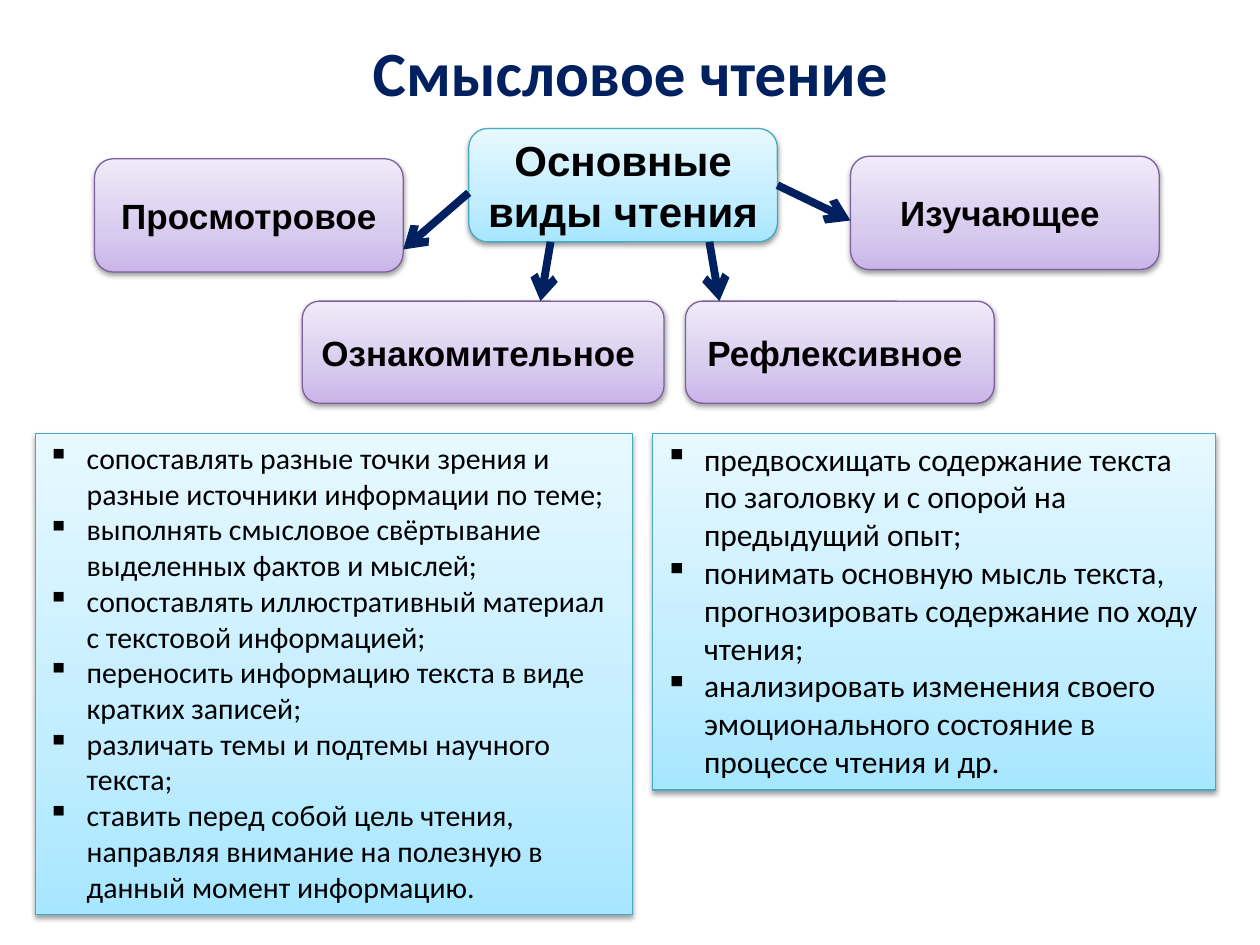
"""Build the slide on the main kinds of reading and the skills they develop."""
from copy import deepcopy

from lxml import etree
from pptx import Presentation
from pptx.dml.color import RGBColor
from pptx.enum import shapes, text
from pptx.oxml import ns, parse_xml
from pptx.util import Inches, Pt

BLACK = RGBColor(0x00, 0x00, 0x00)
NAVY = RGBColor(0x00, 0x20, 0x60)
TEAL = RGBColor(0x46, 0xAA, 0xC5)
PURPLE = RGBColor(0x7D, 0x60, 0xA0)
BLUES = [RGBColor(0xA7, 0xE6, 0xFF), RGBColor(0xC1, 0xED, 0xFF), RGBColor(0xE7, 0xF8, 0xFF)]
LILACS = [RGBColor(0xC9, 0xB5, 0xE8), RGBColor(0xD8, 0xCB, 0xEE), RGBColor(0xF0, 0xEA, 0xF9)]
SHADOW = (
    f'<a:outerShdw {ns.nsdecls("a")} blurRad="{Pt(3.1)}" dist="{Pt(1.6)}" dir="5400000" '
    'rotWithShape="0"><a:srgbClr val="000000"><a:alpha val="38000"/></a:srgbClr></a:outerShdw>'
)

presentation = Presentation()
presentation.slide_width = Inches(10)
presentation.slide_height = Inches(7.5)
slide = presentation.slides.add_slide(presentation.slide_layouts[6])


def write(shape, paragraphs, size, font="Calibri", color=BLACK, bold=False, bullet=None,
          align=text.PP_ALIGN.LEFT, anchor=text.MSO_ANCHOR.TOP, grow=False):
    frame = shape.text_frame
    frame.word_wrap = True
    frame.vertical_anchor = anchor
    if grow:
        frame.auto_size = text.MSO_AUTO_SIZE.SHAPE_TO_FIT_TEXT
    for index, line in enumerate(paragraphs):
        paragraph = frame.paragraphs[0] if index == 0 else frame.add_paragraph()
        paragraph.alignment = align
        if bullet:
            properties = paragraph._p.get_or_add_pPr()
            properties.set("marL", str(Inches(0.31)))
            properties.set("indent", str(-Inches(0.31)))
            etree.SubElement(properties, ns.qn("a:buChar")).set("char", bullet)
        run = paragraph.add_run()
        run.text = line
        run.font.name = font
        run.font.size = Pt(size)
        run.font.bold = bold
        run.font.color.rgb = color


def add_panel(kind, box, colors, outline):
    shape = slide.shapes.add_shape(kind, *map(Inches, box))
    shape.fill.gradient()
    shape.fill.gradient_angle = 90
    stop_list = shape._element.spPr.find(ns.qn("a:gradFill")).find(ns.qn("a:gsLst"))
    stop_list.insert(1, deepcopy(stop_list[0]))
    for stop, position, color in zip(shape.fill.gradient_stops, (0, 0.35, 1), colors):
        stop.position = position
        stop.color.rgb = color
    shape.line.color.rgb = outline
    shape.line.width = Pt(0.75)
    shape.shadow.inherit = False
    shape._element.spPr.find(ns.qn("a:effectLst")).append(parse_xml(SHADOW))
    return shape


kinds = [
    ("Основные виды чтения", (3.72, 1.02, 2.45, 0.9), 24, BLUES, TEAL),
    ("Просмотровое", (0.75, 1.26, 2.45, 0.9), 20, LILACS, PURPLE),
    ("Ознакомительное ", (2.4, 2.39, 2.87, 0.81), 20, LILACS, PURPLE),
    ("Изучающее ", (6.75, 1.24, 2.45, 0.9), 20, LILACS, PURPLE),
    ("Рефлексивное ", (5.44, 2.39, 2.45, 0.81), 20, LILACS, PURPLE),
]
kind_boxes = []
for label, box, size, colors, outline in kinds:
    kind_box = add_panel(shapes.MSO_SHAPE.ROUNDED_RECTANGLE, box, colors, outline)
    write(kind_box, [label], size, font="Arial", bold=True,
          align=text.PP_ALIGN.CENTER, anchor=text.MSO_ANCHOR.MIDDLE)
    kind_boxes.append(kind_box)

skills = [
    ((0.28, 3.44, 4.74, 3.82), 17, [
        "сопоставлять разные точки зрения и разные источники информации по теме;",
        "выполнять смысловое свёртывание выделенных фактов и мыслей;",
        "сопоставлять иллюстративный материал с текстовой информацией;",
        "переносить информацию текста в виде кратких записей;",
        "различать темы и подтемы научного текста;",
        "ставить перед собой цель чтения, направляя внимание на полезную в данный момент информацию.",
    ]),
    ((5.18, 3.44, 4.47, 2.83), 18, [
        "предвосхищать содержание текста по заголовку и с опорой на предыдущий опыт;",
        "понимать основную мысль текста, прогнозировать содержание по ходу чтения;",
        "анализировать изменения своего эмоционального состояние в процессе чтения и др.",
    ]),
]
for box, size, lines in skills:
    skill_box = add_panel(shapes.MSO_SHAPE.RECTANGLE, box, BLUES, TEAL)
    write(skill_box, lines, size, bullet="▪", grow=True)

arrows = [
    (3.72, 1.53, 3.2, 1.98),
    (6.17, 1.47, 6.75, 1.75),
    (5.63, 1.92, 5.71, 2.39),
    (4.37, 1.92, 4.29, 2.39),
]
connectors = []
for ends in arrows:
    connector = slide.shapes.add_connector(shapes.MSO_CONNECTOR.STRAIGHT, *map(Inches, ends))
    connector.line.color.rgb = NAVY
    connector.line.width = Pt(4.5)
    etree.SubElement(connector.line._get_or_add_ln(), ns.qn("a:tailEnd")).set("type", "arrow")
    etree.SubElement(connector._element.spPr, ns.qn("a:effectLst"))
    connectors.append(connector)
connectors[1].begin_connect(kind_boxes[0], 3)

title = slide.shapes.add_textbox(Inches(2.86), Inches(0.22), Inches(4.46), Inches(0.71))
write(title, ["Смысловое чтение"], 36, color=NAVY, bold=True, grow=True)

presentation.save("out.pptx")
